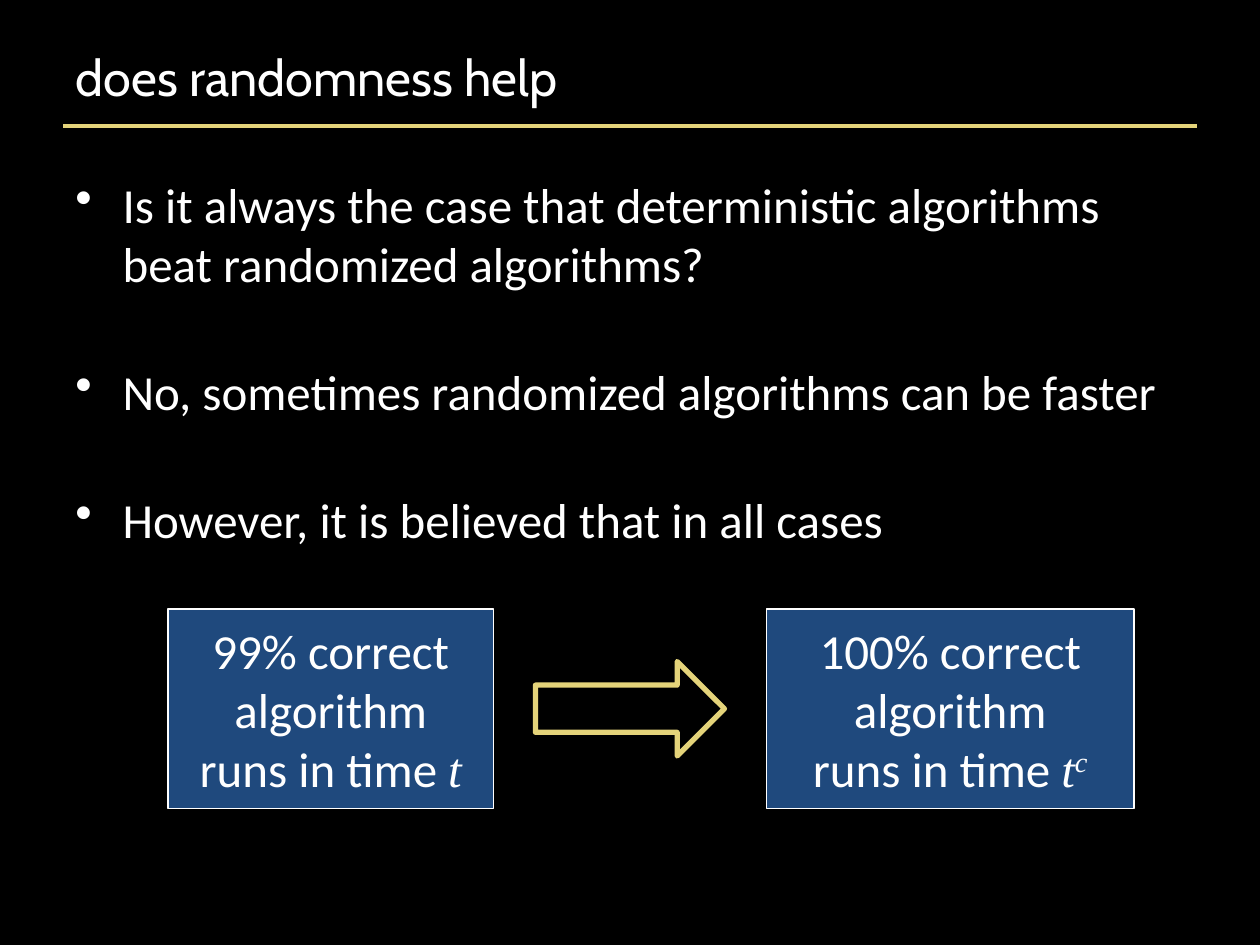
from dataclasses import dataclass

from lxml import etree
from pptx import Presentation
from pptx.dml.color import RGBColor
from pptx.enum.shapes import MSO_CONNECTOR, MSO_SHAPE
from pptx.enum.text import MSO_ANCHOR, MSO_AUTO_SIZE, PP_ALIGN
from pptx.oxml.ns import qn
from pptx.util import Pt

RECT, ARROW = MSO_SHAPE.RECTANGLE, MSO_SHAPE.RIGHT_ARROW
STRAIGHT = MSO_CONNECTOR.STRAIGHT
MIDDLE, NO_FIT = MSO_ANCHOR.MIDDLE, MSO_AUTO_SIZE.NONE
LEFT, CENTER = PP_ALIGN.LEFT, PP_ALIGN.CENTER

COLORS = {"back": "000000", "text": "FFFFFF", "gold": "E4D37A", "blue": "1F497D"}
BODY, MATH = "Calibri", "Times New Roman"
SIZE, INDENT = 28, 27
POINTS = [
    "Is it always the case that deterministic algorithms beat randomized algorithms?",
    "No, sometimes randomized algorithms can be faster",
    "However, it is believed that in all cases",
]


@dataclass
class Box:
    left: float
    width: float
    lines: list[str]
    power: str = ""


BOXES = [
    Box(96, 186, ["99% correct", "algorithm"]),
    Box(438, 210, ["100% correct algorithm"], "c"),
]


def color(name: str) -> RGBColor:
    return RGBColor.from_string(COLORS[name])


def style(para, font: str, size: float, align=LEFT) -> None:
    para.alignment = align
    para.font.name = font
    para.font.size = Pt(size)
    para.font.color.rgb = color("text")


def add_title(slide, text: str) -> None:
    title = slide.shapes.title
    title.left, title.top, title.width, title.height = Pt(36), Pt(21.6), Pt(648), Pt(44.6)
    frame = title.text_frame
    frame.text = text
    frame.auto_size = NO_FIT
    frame.vertical_anchor = MIDDLE
    style(frame.paragraphs[0], "Cabin", 28.8)


def add_rule(slide) -> None:
    rule = slide.shapes.add_connector(STRAIGHT, Pt(36), Pt(72), Pt(684), Pt(72))
    rule.line.color.rgb = color("gold")
    rule.line.width = Pt(2)
    etree.SubElement(rule._element.spPr, qn("a:effectLst"))


def add_points(slide, points: list[str]) -> None:
    frame = slide.shapes.add_textbox(Pt(36), Pt(96), Pt(648), Pt(228)).text_frame
    frame.word_wrap = True
    for i, text in enumerate(points):
        para = frame.paragraphs[0] if i == 0 else frame.add_paragraph()
        para.text = text
        style(para, BODY, SIZE)
        para.space_before, para.space_after = Pt(5.6), Pt(34)
        props = para._p.get_or_add_pPr()
        props.set("marL", str(Pt(INDENT)))
        props.set("indent", str(Pt(-INDENT)))
        bullet = etree.Element(qn("a:buChar"), char="•")
        props.find(qn("a:defRPr")).addprevious(bullet)


def add_shape(slide, kind, area: tuple, fill: str, line: str, weight: float):
    shape = slide.shapes.add_shape(kind, *map(Pt, area))
    shape.shadow.inherit = False
    shape.fill.solid()
    shape.fill.fore_color.rgb = color(fill)
    shape.line.color.rgb = color(line)
    shape.line.width = Pt(weight)
    return shape


def add_math(para, text: str):
    run = para.add_run()
    run.text = text
    run.font.name = MATH
    run.font.italic = True
    return run


def add_box(slide, box: Box) -> None:
    shape = add_shape(slide, RECT, (box.left, 348, box.width, 114), "blue", "text", 0.75)
    frame = shape.text_frame
    frame.word_wrap = True
    frame.vertical_anchor = MIDDLE
    frame.text = "\n".join([*box.lines, "runs in time "])
    for para in frame.paragraphs:
        style(para, BODY, SIZE, CENTER)
    last = frame.paragraphs[-1]
    add_math(last, "t")
    if box.power:
        add_math(last, box.power)._r.get_or_add_rPr().set("baseline", "30000")


def main() -> None:
    deck = Presentation()
    deck.slide_width, deck.slide_height = Pt(720), Pt(540)
    slide = deck.slides.add_slide(deck.slide_layouts[5])
    slide.background.fill.solid()
    slide.background.fill.fore_color.rgb = color("back")
    add_rule(slide)
    add_title(slide, "does randomness help")
    add_points(slide, POINTS)
    for box in BOXES:
        add_box(slide, box)
    add_shape(slide, ARROW, (306, 378, 108, 54), "back", "gold", 3)
    deck.save("out.pptx")


if __name__ == "__main__":
    main()
